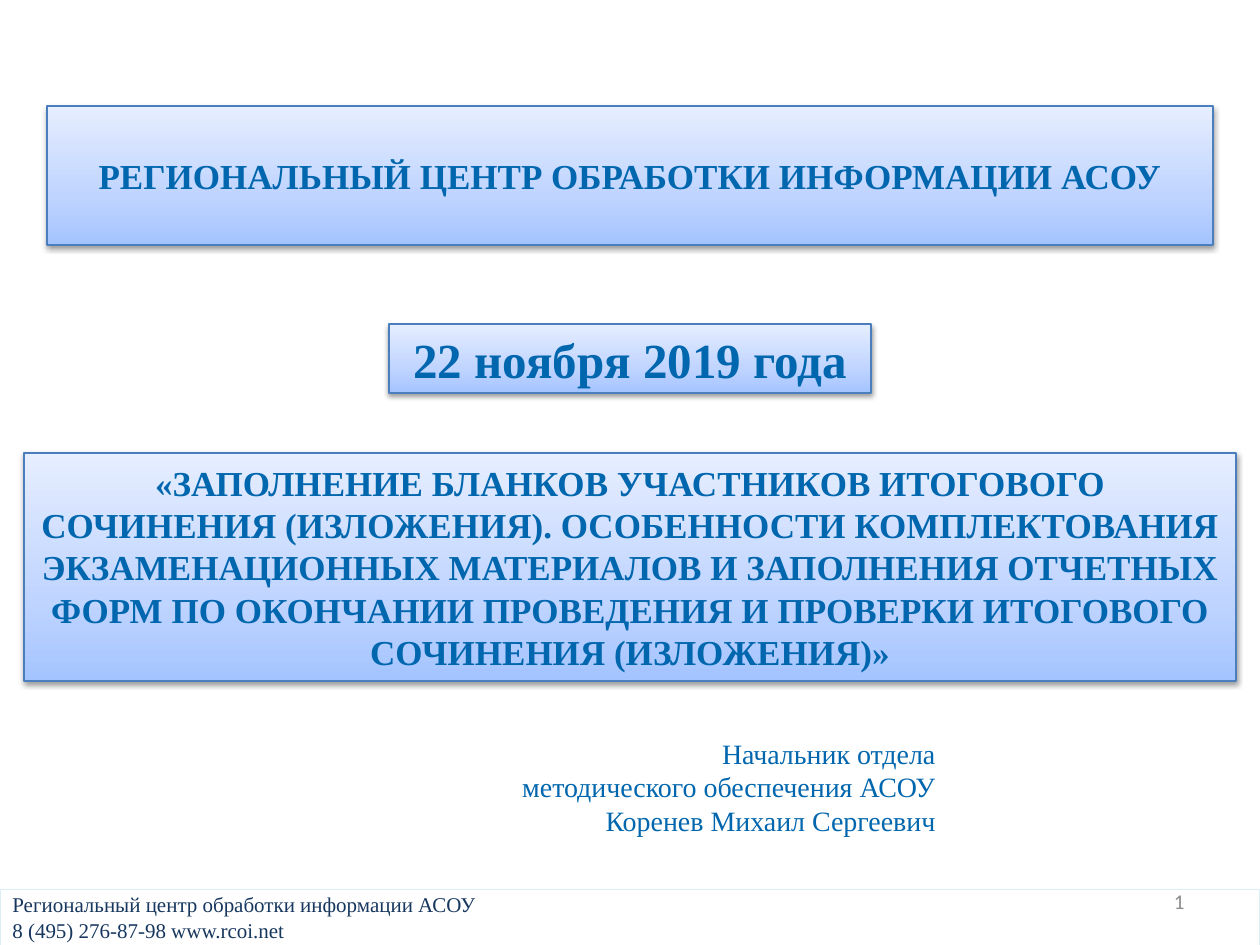
from pptx import Presentation
from pptx.dml.color import RGBColor
from pptx.enum.shapes import MSO_SHAPE
from pptx.enum.text import MSO_ANCHOR, PP_ALIGN
from pptx.oxml import parse_xml
from pptx.oxml.ns import nsdecls, qn
from pptx.util import Emu, Pt

WHITE = RGBColor(0xFF, 0xFF, 0xFF)
BLUE = RGBColor(0x00, 0x66, 0xAE)
NAVY = RGBColor(0x17, 0x37, 0x5E)
GRAY = RGBColor(0x8C, 0x8C, 0x8C)
EDGE = RGBColor(0x4B, 0x7E, 0xBC)
PALE = RGBColor(0xDB, 0xEE, 0xF4)
STOPS = (
    (0, RGBColor(0xA4, 0xC4, 0xFF)),
    (35, RGBColor(0xBF, 0xD4, 0xFF)),
    (100, RGBColor(0xE6, 0xEE, 0xFF)),
)
SERIF = "Times New Roman"
SANS = "Calibri"


class Deck:
    def __init__(self, wide, high):
        self.prs = Presentation()
        self.prs.slide_width = self.px(wide)
        self.prs.slide_height = self.px(high)
        self.slide = self.prs.slides.add_slide(self.prs.slide_layouts[6])

    def px(self, size):
        return Emu(round(size * 914400 / 126))

    def words(self, shape, lines, size, color, align, bold=False, font=SERIF,
              anchor=MSO_ANCHOR.MIDDLE):
        frame = shape.text_frame
        frame.word_wrap = True
        frame.vertical_anchor = anchor
        frame.text = "\n".join(lines)
        for para in frame.paragraphs:
            para.alignment = align
            para.font.name = font
            para.font.size = Pt(size)
            para.font.bold = bold
            para.font.color.rgb = color

    def rect(self, box, edge, width):
        shape = self.slide.shapes.add_shape(
            MSO_SHAPE.RECTANGLE, *map(self.px, box))
        shape.shadow.inherit = False
        shape.fill.solid()
        shape.fill.fore_color.rgb = WHITE
        shape.line.color.rgb = edge
        shape.line.width = Pt(width)
        return shape

    def panel(self, box, text, size):
        shape = self.rect(box, EDGE, 0.75)
        props = shape._element.spPr
        stops = "".join(
            f'<a:gs pos="{pos * 1000}"><a:srgbClr val="{color}"/></a:gs>'
            for pos, color in STOPS)
        props.replace(props.find(qn("a:solidFill")), parse_xml(
            f'<a:gradFill {nsdecls("a")} rotWithShape="1">'
            f'<a:gsLst>{stops}</a:gsLst>'
            '<a:lin ang="16200000" scaled="0"/></a:gradFill>'))
        props.find(qn("a:effectLst")).append(parse_xml(
            f'<a:outerShdw {nsdecls("a")} blurRad="40000" dist="20000" '
            'dir="5400000" rotWithShape="0"><a:srgbClr val="000000">'
            '<a:alpha val="38000"/></a:srgbClr></a:outerShdw>'))
        self.words(shape, [text], size, BLUE, PP_ALIGN.CENTER, bold=True)

    def footer(self, box, lines):
        shape = self.rect(box, PALE, 0.5)
        self.words(shape, lines, 12, NAVY, PP_ALIGN.LEFT)

    def label(self, box, lines, size, color, **style):
        shape = self.slide.shapes.add_textbox(*map(self.px, box))
        self.words(shape, lines, size, color, PP_ALIGN.RIGHT, **style)


def main():
    deck = Deck(1260, 945)
    deck.footer((0, 889, 1260, 56), [
        "Региональный центр обработки информации АСОУ",
        "8 (495) 276-87-98 www.rcoi.net",
    ])
    deck.panel(
        (24, 453, 1212, 228),
        "«ЗАПОЛНЕНИЕ БЛАНКОВ УЧАСТНИКОВ ИТОГОВОГО СОЧИНЕНИЯ (ИЗЛОЖЕНИЯ). "
        "ОСОБЕННОСТИ КОМПЛЕКТОВАНИЯ ЭКЗАМЕНАЦИОННЫХ МАТЕРИАЛОВ И ЗАПОЛНЕНИЯ "
        "ОТЧЕТНЫХ ФОРМ ПО ОКОНЧАНИИ ПРОВЕДЕНИЯ И ПРОВЕРКИ ИТОГОВОГО "
        "СОЧИНЕНИЯ (ИЗЛОЖЕНИЯ)»", 20)
    deck.panel((47, 106, 1166, 139),
               "РЕГИОНАЛЬНЫЙ ЦЕНТР ОБРАБОТКИ ИНФОРМАЦИИ АСОУ", 20)
    deck.panel((389, 324, 482, 69), "22 ноября 2019 года", 28)
    deck.label((501, 730, 447, 115), [
        "Начальник отдела\vметодического обеспечения АСОУ",
        "Коренев Михаил Сергеевич",
    ], 16, BLUE, anchor=MSO_ANCHOR.TOP)
    deck.label((903, 876, 294, 50), ["1"], 12, GRAY, font=SANS)
    deck.prs.save("out.pptx")


if __name__ == "__main__":
    main()
